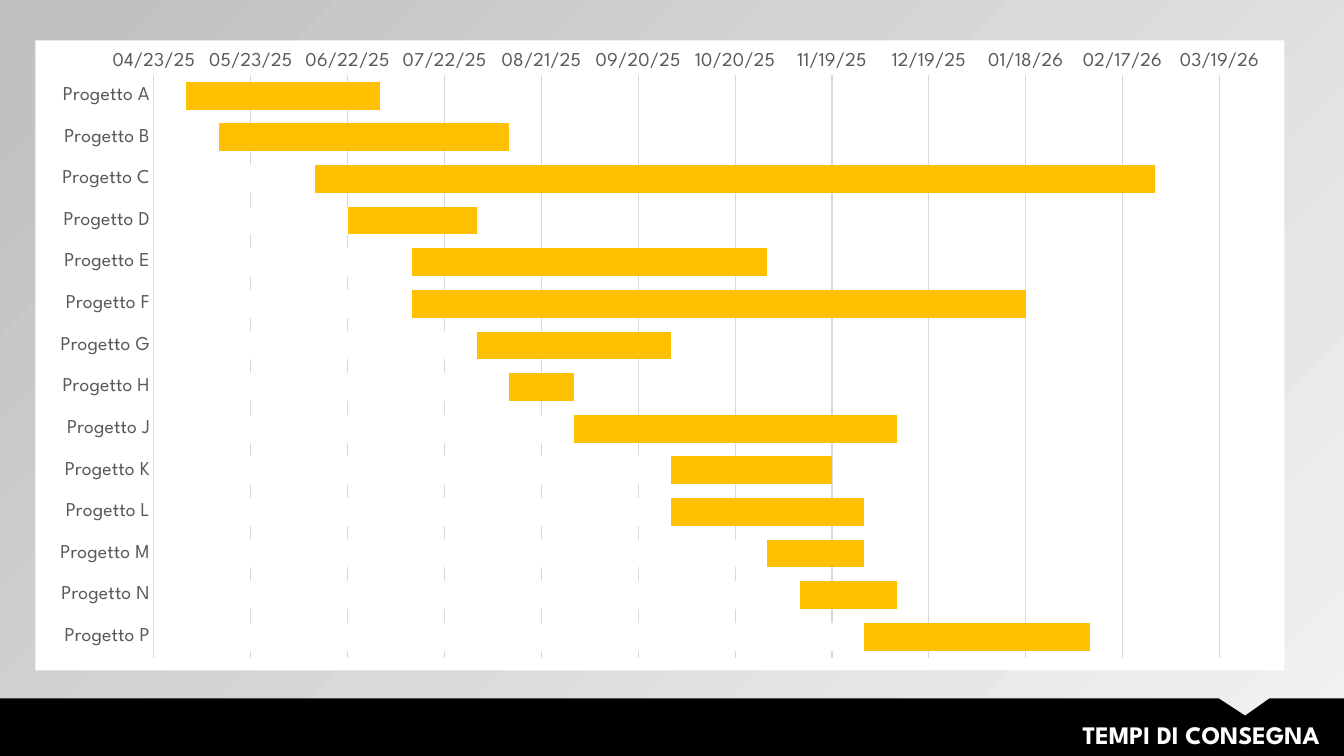
"""Build the delivery-times slide: a Gantt chart of projects above a black title band."""
from lxml.etree import fromstring
from pptx import Presentation
from pptx.chart.data import CategoryChartData
from pptx.dml.color import RGBColor
from pptx.enum.chart import XL_CHART_TYPE, XL_TICK_MARK
from pptx.enum.text import MSO_ANCHOR, PP_ALIGN
from pptx.oxml.ns import nsdecls
from pptx.util import Inches, Pt

FONT = "League Spartan"
GREY = "D9D9D9"
PROJECTS = [
    ("A", 45780, 45840), ("B", 45790, 45880), ("C", 45820, 46080),
    ("D", 45830, 45870), ("E", 45850, 45960), ("F", 45850, 46040),
    ("G", 45870, 45930), ("H", 45880, 45900), ("J", 45900, 46000),
    ("K", 45930, 45980), ("L", 45930, 45990), ("M", 45960, 45990),
    ("N", 45970, 46000), ("P", 45990, 46060),
]


def rgb(code):
    return RGBColor.from_string(code)


def style_font(font, size, color, bold=False):
    font.name = FONT
    font.size = Pt(size)
    font.bold = bold
    font.color.rgb = rgb(color)


prs = Presentation()
prs.slide_width, prs.slide_height = Inches(13.33), Inches(7.5)
s = prs.slides.add_slide(prs.slide_layouts[5])

bg = s.background.fill
bg.gradient()
bg.gradient_angle = 135
for stop, color, position in zip(bg.gradient_stops, ("F2F2F2", "BFBFBF"), (0, 1)):
    stop.color.rgb = rgb(color)
    stop.position = position

outline = [(12.09, 6.93), (12.35, 7.1), (12.59, 6.93),
           (13.33, 6.93), (13.33, 7.5), (0, 7.5)]
builder = s.shapes.build_freeform(0, Inches(6.93))
builder.add_line_segments([(Inches(x), Inches(y)) for x, y in outline], close=True)
band = builder.convert_to_shape()
band.shadow.inherit = False
band.fill.solid()
band.fill.fore_color.rgb = rgb("000000")
band.line.fill.background()

title = s.shapes.title
title.left, title.top = Inches(4.13), Inches(7.09)
title.width, title.height = Inches(9.06), Inches(0.4)
tf = title.text_frame
tf.text = "TEMPI DI CONSEGNA"
tf.vertical_anchor = MSO_ANCHOR.TOP
p = tf.paragraphs[0]
p.alignment = PP_ALIGN.RIGHT
style_font(p.font, 18, "FFFFFF", bold=True)
band.element.addnext(title.element)

data = CategoryChartData()
data.categories = [f"Progetto {name}" for name, start, end in PROJECTS]
data.add_series("Series 1", [end for name, start, end in PROJECTS])
data.add_series("Series 2", [start for name, start, end in PROJECTS])
frame = s.shapes.add_chart(XL_CHART_TYPE.BAR_CLUSTERED, Inches(0.35), Inches(0.4),
                           Inches(12.39), Inches(6.25), data)
chart = frame.chart
chart.has_title = False
chart.has_legend = False
style_font(chart.font, 14, "000000")

plot = chart.plots[0]
plot.gap_width = 50
plot.overlap = 100
plot.vary_by_categories = False
for series, color in zip(plot.series, ("FFC000", "FFFFFF")):
    series.format.fill.solid()
    series.format.fill.fore_color.rgb = rgb(color)

names, dates = chart.category_axis, chart.value_axis
for axis in (names, dates):
    axis.major_tick_mark = axis.minor_tick_mark = XL_TICK_MARK.NONE
    style_font(axis.tick_labels.font, 14, "595959")
names.reverse_order = True
dates.minimum_scale, dates.maximum_scale, dates.major_unit = 45770, 46100, 30
dates.tick_labels.number_format = "mm/dd/yy;@"
dates.tick_labels.number_format_is_linked = False
dates.format.line.fill.background()
dates.has_major_gridlines = True
for line in (names.format.line, dates.major_gridlines.format.line):
    line.color.rgb = rgb(GREY)
    line.width = Pt(0.75)

chart_xml = chart.element.chart
chart_xml.addnext(fromstring(
    f'<c:spPr {nsdecls("c", "a")}><a:solidFill><a:srgbClr val="FFFFFF"/></a:solidFill>'
    '<a:ln><a:noFill/></a:ln></c:spPr>'))
plot_area = chart_xml.plotArea
for old in plot_area.xpath("c:layout"):
    plot_area.remove(old)
plot_area.insert(0, fromstring(
    f'<c:layout {nsdecls("c")}><c:manualLayout><c:layoutTarget val="inner"/>'
    '<c:xMode val="edge"/><c:yMode val="edge"/><c:x val="0.095"/><c:y val="0.055"/>'
    '<c:w val="0.853"/><c:h val="0.925"/></c:manualLayout></c:layout>'))

prs.save("out.pptx")
